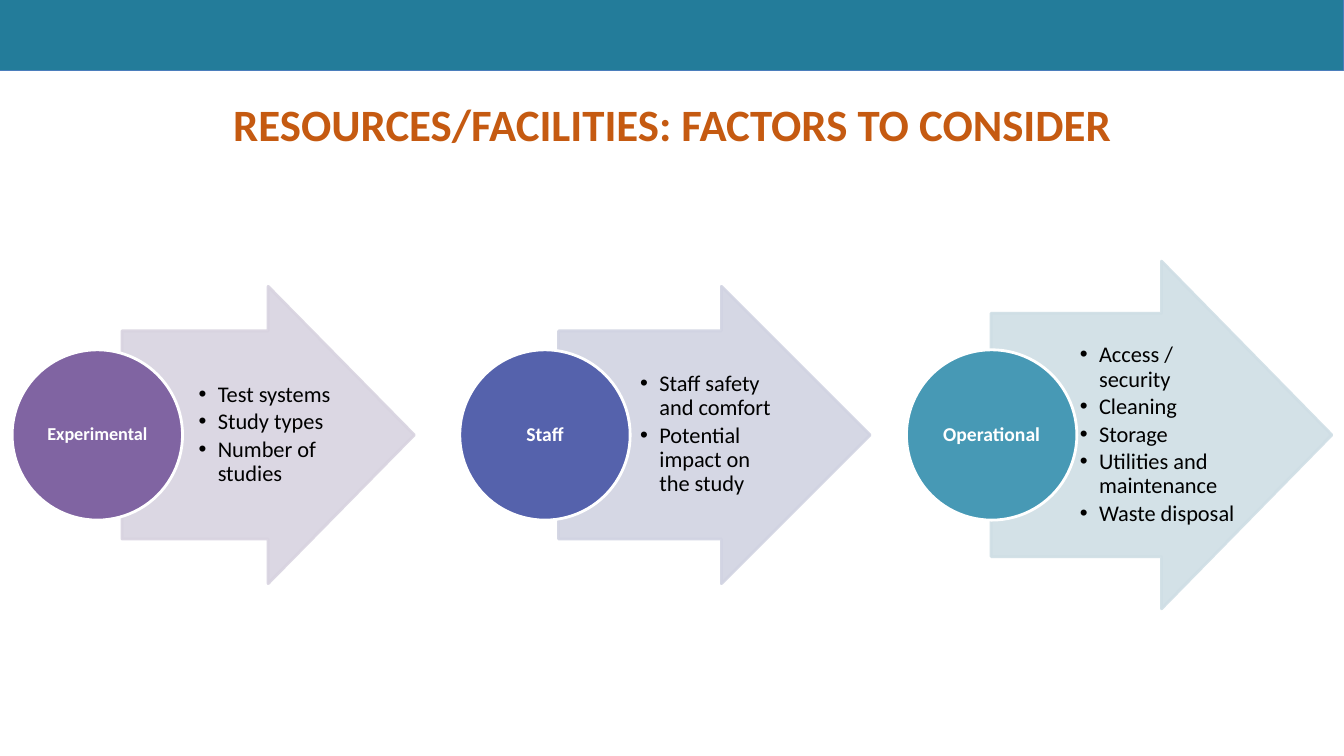
from dataclasses import dataclass

from lxml.etree import SubElement
from pptx import Presentation
from pptx.dml.color import RGBColor
from pptx.enum.shapes import MSO_SHAPE
from pptx.enum.text import MSO_ANCHOR, PP_ALIGN
from pptx.oxml.ns import qn
from pptx.util import Pt

EMU_PER_PX = 9144


@dataclass(frozen=True)
class Theme:
    font: str = "Calibri"
    banner: str = "237C9A"
    banner_edge: str = "4B7EBC"
    title: str = "C55A11"
    body: str = "000000"
    white: str = "FFFFFF"
    title_size: int = 32
    body_size: int = 16
    opacity: int = 90


@dataclass(frozen=True)
class Area:
    left: int
    top: int
    width: int
    height: int

    def emu(self) -> list[int]:
        return [px(n) for n in (self.left, self.top, self.width, self.height)]


@dataclass(frozen=True)
class Factor:
    label: str
    label_size: int
    circle_left: int
    circle_color: str
    arrow_left: int
    arrow_width: int
    arrow_height: int
    arrow_color: str
    points: tuple[str, ...]


THEME = Theme()
AXIS = 431
CIRCLE = 169
LABEL_INSET = 25
SHAFT = 0.7
BULLET_INDENT = 19

FACTORS = (
    Factor("Experimental", 13, 12, "8064A2", 121, 290, 295, "D8D3E0",
           ("Test systems", "Study types", "Number of studies")),
    Factor("Staff", 14, 456, "5562AC", 554, 309, 295, "D1D3E2",
           ("Staff safety and comfort", "Potential impact on the study")),
    Factor("Operational", 14, 899, "4799B5", 983, 338, 345, "CFDEE5",
           ("Access / security", "Cleaning", "Storage",
            "Utilities and maintenance", "Waste disposal")),
)


def px(length: int) -> int:
    return length * EMU_PER_PX


def apply(target, values: dict) -> None:
    for name, value in values.items():
        setattr(target, name, value)


def add_figure(page, kind, area: Area, fill: str, edge: str, edge_width: float,
               opacity: int = 100):
    figure = page.shapes.add_shape(kind, *area.emu())
    figure.shadow.inherit = False
    figure.fill.solid()
    figure.fill.fore_color.rgb = RGBColor.from_string(fill)
    figure.line.color.rgb = RGBColor.from_string(edge)
    figure.line.width = Pt(edge_width)
    if opacity < 100:
        for color in figure._element.spPr.iter(qn("a:srgbClr")):
            SubElement(color, qn("a:alpha")).set("val", str(opacity * 1000))
    return figure


def add_text(page, area: Area, lines: tuple[str, ...], size: int, color: str,
             margins: tuple[int, int, int, int], bold: bool = False,
             bulleted: bool = False, anchor=MSO_ANCHOR.MIDDLE,
             spacing: float = 0.9) -> None:
    frame = page.shapes.add_textbox(*area.emu()).text_frame
    left, top, right, bottom = map(px, margins)
    apply(frame, {"word_wrap": True, "vertical_anchor": anchor,
                  "margin_left": left, "margin_top": top,
                  "margin_right": right, "margin_bottom": bottom})
    for index, line in enumerate(lines):
        para = frame.paragraphs[0] if index == 0 else frame.add_paragraph()
        apply(para, {"line_spacing": spacing,
                     "alignment": PP_ALIGN.LEFT if bulleted else PP_ALIGN.CENTER})
        if bulleted:
            apply(para, {"level": 1, "space_after": Pt(size * 0.15)})
            properties = para._p.get_or_add_pPr()
            properties.set("marL", str(px(BULLET_INDENT)))
            properties.set("indent", str(-px(BULLET_INDENT)))
            SubElement(properties, qn("a:buFont")).set("typeface", "Arial")
            SubElement(properties, qn("a:buChar")).set("char", "•")
        span = para.add_run()
        span.text = line
        apply(span.font, {"name": THEME.font, "size": Pt(size), "bold": bold})
        span.font.color.rgb = RGBColor.from_string(color)


def add_factor(page, factor: Factor) -> None:
    width, height = factor.arrow_width, factor.arrow_height
    arrow = add_figure(
        page, MSO_SHAPE.RIGHT_ARROW,
        Area(factor.arrow_left, AXIS - height // 2, width, height),
        factor.arrow_color, factor.arrow_color, 2, THEME.opacity)
    arrow.adjustments[0] = SHAFT
    arrow.adjustments[1] = 0.5

    shaft = round(height * SHAFT)
    add_text(page,
             Area(factor.arrow_left + width // 4, AXIS - shaft // 2,
                  width // 2 - 4, shaft),
             factor.points, THEME.body_size, THEME.body, (4, 1, 2, 1),
             bulleted=True)

    circle_top = AXIS - CIRCLE // 2
    add_figure(page, MSO_SHAPE.OVAL,
               Area(factor.circle_left, circle_top, CIRCLE, CIRCLE),
               factor.circle_color, THEME.white, 2)
    label_side = CIRCLE - 2 * LABEL_INSET
    add_text(page,
             Area(factor.circle_left + LABEL_INSET, circle_top + LABEL_INSET,
                  label_side, label_side),
             (factor.label,), factor.label_size, THEME.white, (1, 1, 1, 1),
             bold=True)


def main() -> None:
    deck = Presentation()
    apply(deck, {"slide_width": px(1333), "slide_height": px(750)})
    page = deck.slides.add_slide(deck.slide_layouts[6])
    add_figure(page, MSO_SHAPE.RECTANGLE, Area(0, 0, 1333, 70),
               THEME.banner, THEME.banner_edge, 0.75)
    add_text(page, Area(67, 91, 1200, 65),
             ("RESOURCES/FACILITIES: FACTORS TO CONSIDER",),
             THEME.title_size, THEME.title, (10, 5, 10, 0), bold=True,
             anchor=MSO_ANCHOR.TOP, spacing=1.0)
    for factor in FACTORS:
        add_factor(page, factor)
    deck.save("out.pptx")


if __name__ == "__main__":
    main()
